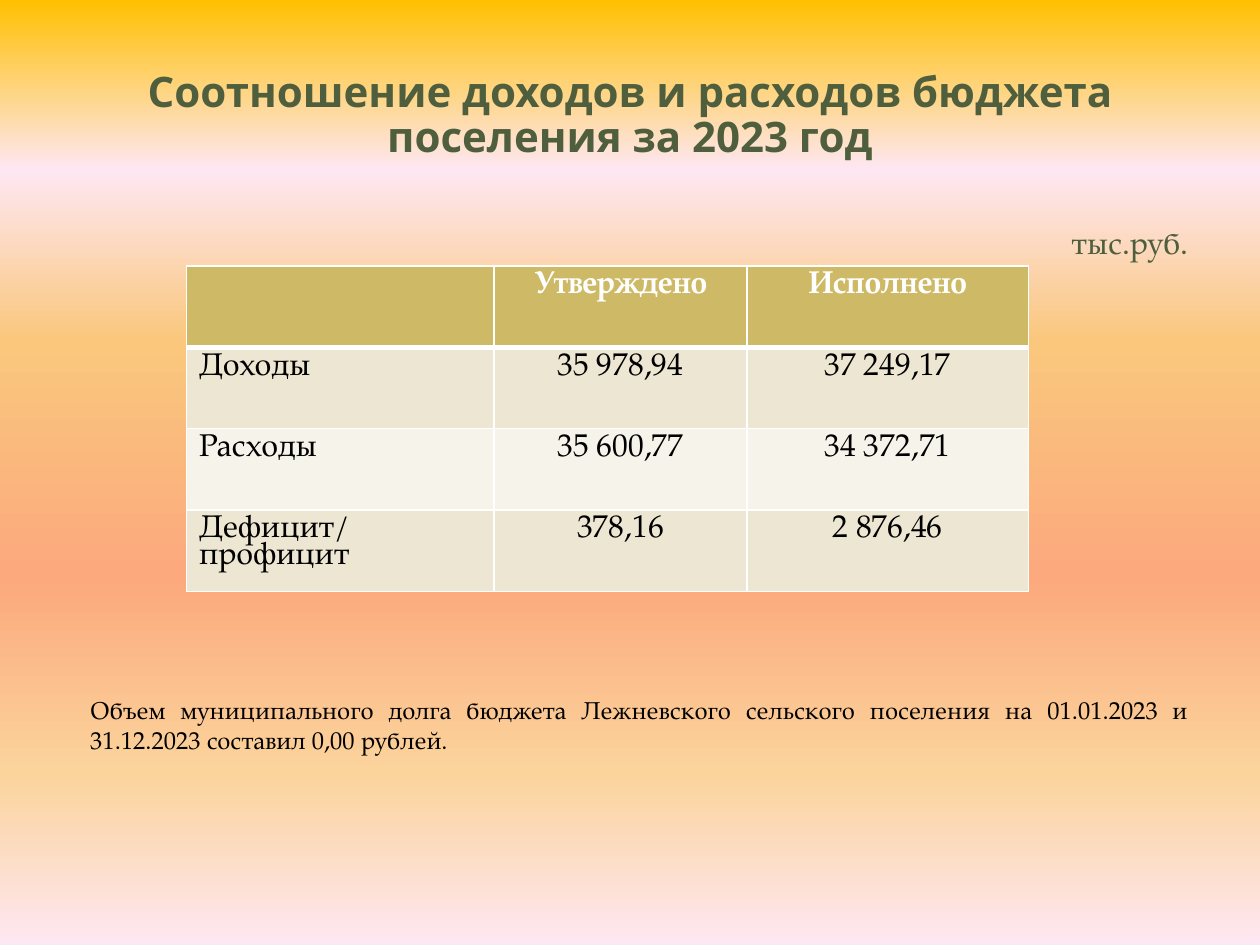
from copy import deepcopy
from lxml.etree import SubElement
from pptx import Presentation
from pptx.dml.color import RGBColor as Rgb
from pptx.enum.text import MSO_ANCHOR as Anchor, PP_ALIGN as Align
from pptx.oxml.ns import qn
from pptx.util import Cm, Pt

COLORS = {
    "heading": "4F5E3C", "text": "000000", "white": "FFFFFF",
    "header": "CEB966", "band": "EDE6D3", "light": "F6F3EA",
}
BACKGROUND = [(0, "FFC000"), (0.18, "FEE7F2"), (0.36, "FAC77D"),
              (0.61, "FBA97D"), (0.82, "FBD49C"), (1, "FEE7F2")]
BUDGET = [
    ("", "Утверждено", "Исполнено"),
    ("Доходы", "35 978,94", "37 249,17"),
    ("Расходы", "35 600,77", "34 372,71"),
    ("Дефицит/ профицит", "378,16", "2 876,46"),
]
COLUMN_WIDTHS = (6.2, 5.1, 5.67)
ROW_HEIGHT = 1.64


def write(frame, text, size=18, font="TeX Gyre Pagella", color="text",
          bold=False, align=Align.LEFT, spacing=None):
    paragraph = frame.paragraphs[0]
    paragraph.alignment = align
    paragraph.line_spacing = spacing
    run = paragraph.add_run()
    run.text = text
    run.font.size = Pt(size)
    run.font.name = font
    run.font.bold = bold
    run.font.color.rgb = Rgb.from_string(COLORS[color])


class BudgetSlide:
    def __init__(self, deck):
        self.slide = deck.slides.add_slide(deck.slide_layouts[6])

    def background(self, stops):
        fill = self.slide.background.fill
        fill.gradient()
        fill.gradient_angle = 270
        stop_list = self.slide.element.find(".//" + qn("a:gsLst"))
        for _ in stops[2:]:
            stop_list.append(deepcopy(stop_list[0]))
        for stop, (position, color) in zip(fill.gradient_stops, stops):
            stop.position = position
            stop.color.rgb = Rgb.from_string(color)

    def text(self, content, left, top, width, height, anchor=Anchor.TOP, **style):
        box = self.slide.shapes.add_textbox(Cm(left), Cm(top), Cm(width), Cm(height))
        box.text_frame.word_wrap = True
        box.text_frame.vertical_anchor = anchor
        write(box.text_frame, content, **style)

    def borders(self, cell, bottom):
        properties = cell._tc.get_or_add_tcPr()
        sides = {"a:lnL": 1, "a:lnR": 1, "a:lnT": 1, "a:lnB": bottom}
        for index, (side, width) in enumerate(sides.items()):
            line = SubElement(properties, qn(side), w=str(Pt(width)))
            solid = SubElement(line, qn("a:solidFill"))
            SubElement(solid, qn("a:srgbClr"), val=COLORS["white"])
            properties.insert(index, line)

    def table(self, rows, left, top, widths, row_height):
        table = self.slide.shapes.add_table(
            len(rows), len(widths), Cm(left), Cm(top),
            Cm(sum(widths)), Cm(row_height * len(rows))).table
        for column, width in zip(table.columns, widths):
            column.width = Cm(width)
        for r, values in enumerate(rows):
            header = r == 0
            shade = "header" if header else "band" if r % 2 else "light"
            for c, value in enumerate(values):
                cell = table.cell(r, c)
                cell.fill.solid()
                cell.fill.fore_color.rgb = Rgb.from_string(COLORS[shade])
                self.borders(cell, bottom=3 if header else 1)
                if value:
                    write(cell.text_frame, value, bold=header, spacing=0.85,
                          color="white" if header else "text",
                          align=Align.CENTER if c else Align.LEFT)


def main():
    deck = Presentation()
    deck.slide_width, deck.slide_height = Cm(25.4), Cm(19.05)
    page = BudgetSlide(deck)
    page.background(BACKGROUND)
    page.text("Соотношение доходов и расходов бюджета поселения за 2023 год",
              1.27, 0.76, 22.86, 3.18, anchor=Anchor.MIDDLE, size=24,
              font="Open Sans", color="heading", bold=True,
              align=Align.CENTER, spacing=0.9)
    page.table(BUDGET, 3.76, 5.36, COLUMN_WIDTHS, ROW_HEIGHT)
    page.text("тыс.руб.", 19.25, 4.37, 4.95, 1.02, color="heading", align=Align.RIGHT)
    page.text("Объем муниципального долга бюджета Лежневского сельского поселения "
              "на 01.01.2023 и 31.12.2023 составил 0,00 рублей.",
              1.57, 13.89, 22.63, 1.45, size=14, align=Align.JUSTIFY)
    deck.save("out.pptx")


if __name__ == "__main__":
    main()
